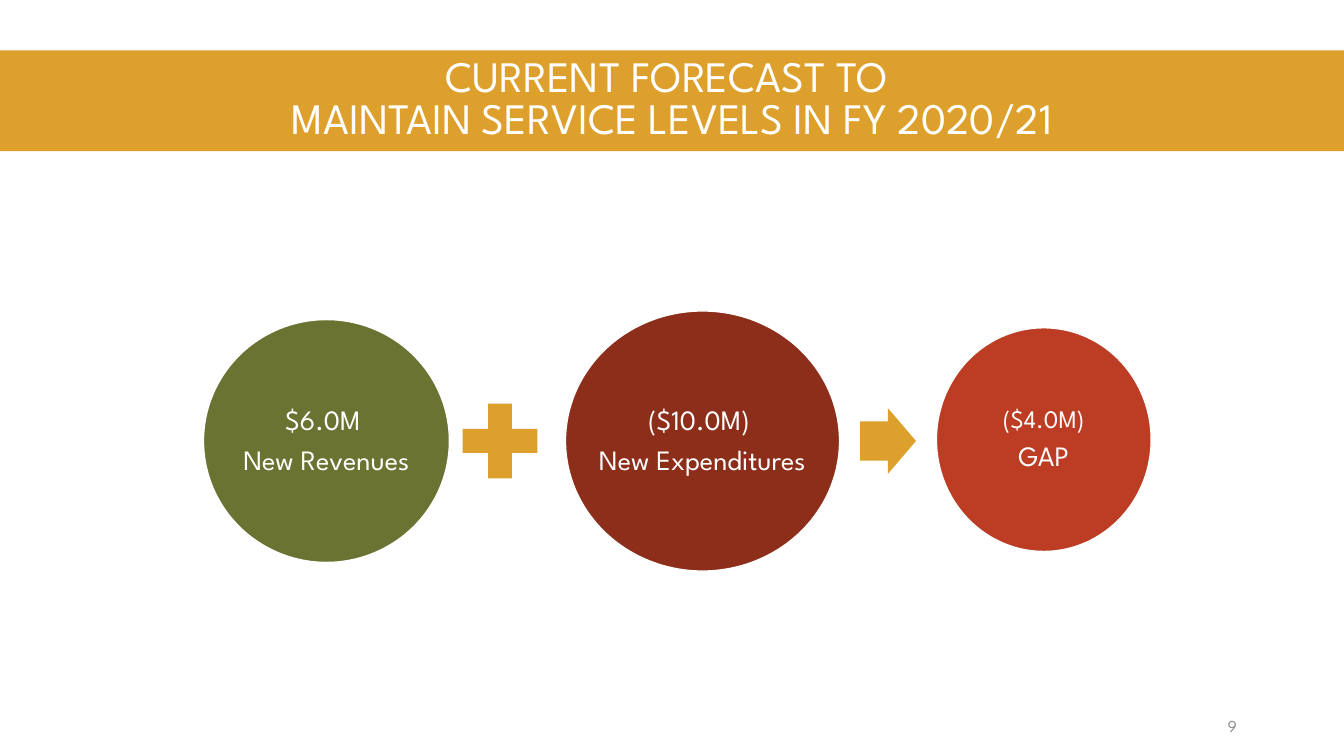
"""Build the slide on the forecast gap for FY 2020/21."""
from dataclasses import dataclass

from pptx import Presentation
from pptx.dml.color import RGBColor
from pptx.enum.shapes import MSO_SHAPE
from pptx.enum.text import MSO_ANCHOR, PP_ALIGN
from pptx.shapes.autoshape import Shape
from pptx.slide import Slide
from pptx.util import Pt

WHITE = RGBColor(0xFF, 0xFF, 0xFF)
GOLD = RGBColor(0xDE, 0xA0, 0x2C)
GREEN = RGBColor(0x6B, 0x73, 0x32)
BROWN = RGBColor(0x8D, 0x2E, 0x1B)
RED = RGBColor(0xBC, 0x3D, 0x24)
GREY = RGBColor(0x8C, 0x8C, 0x8C)
FONT = "League Spartan"
WIDE, HIGH = 960, 540
MID = 315


@dataclass(frozen=True)
class Line:
    text: str
    size: float


@dataclass(frozen=True)
class Disc:
    x: float
    y: float
    width: float
    height: float
    fill: RGBColor
    lines: tuple[Line, ...]


@dataclass(frozen=True)
class Sign:
    kind: MSO_SHAPE
    x: float
    width: float
    height: float
    tweaks: tuple[float, ...]


DISCS = (
    Disc(233.2, MID, 175.7, 173.5, GREEN,
         (Line("$6.0M ", 20), Line("New Revenues", 20))),
    Disc(501.8, MID, 195.8, 185.8, BROWN,
         (Line("($10.0M) ", 20), Line("New Expenditures", 20))),
    Disc(745.6, 314, 153.4, 159.8, RED,
         (Line("($4.0M)", 18), Line("GAP", 20))),
)
SIGNS = (
    Sign(MSO_SHAPE.CROSS, 357.2, 53.4, 53.4, (0.34,)),
    Sign(MSO_SHAPE.RIGHT_ARROW, 634.3, 40, 46.8, (0.6, 0.5)),
)
TITLE = (
    Line("CURRENT FORECAST TO ", 31),
    Line("MAINTAIN SERVICE LEVELS IN FY 2020/21", 31),
)


def apply(target: object, form: dict[str, object]) -> None:
    """Set each format value on the target."""
    for name, value in form.items():
        setattr(target, name, value)


def write(shape: Shape, lines: tuple[Line, ...], ink: RGBColor,
          frame: dict[str, object], align: PP_ALIGN,
          pitch: float, gap: float) -> None:
    """Fill the shape with one paragraph per line."""
    box = shape.text_frame
    apply(box, {"vertical_anchor": MSO_ANCHOR.MIDDLE} | frame)
    for spot, line in enumerate(lines):
        para = box.add_paragraph() if spot else box.paragraphs[0]
        apply(para, {"alignment": align, "line_spacing": pitch,
                     "space_after": Pt(gap * line.size)})
        run = para.add_run()
        run.text = line.text
        apply(run.font, {"name": FONT, "size": Pt(line.size)})
        run.font.color.rgb = ink


def draw(slide: Slide, kind: MSO_SHAPE, x: float, y: float,
         width: float, height: float, fill: RGBColor) -> Shape:
    """Add a flat shape centred on x and y."""
    shape = slide.shapes.add_shape(
        kind, Pt(x - width / 2), Pt(y - height / 2), Pt(width), Pt(height))
    shape.shadow.inherit = False
    shape.fill.solid()
    shape.fill.fore_color.rgb = fill
    shape.line.fill.background()
    return shape


def add_disc(slide: Slide, disc: Disc) -> None:
    """Add a labelled disc with a thin white rim."""
    shape = draw(slide, MSO_SHAPE.OVAL, disc.x, disc.y,
                 disc.width, disc.height, disc.fill)
    shape.line.color.rgb = WHITE
    shape.line.width = Pt(1)
    sides = ("left", "top", "right", "bottom")
    frame = {f"margin_{side}": Pt(0) for side in sides}
    write(shape, disc.lines, WHITE, frame | {"word_wrap": False},
          PP_ALIGN.CENTER, 0.9, 0.35)


def add_sign(slide: Slide, sign: Sign) -> None:
    """Add a gold sign between two discs."""
    shape = draw(slide, sign.kind, sign.x, MID, sign.width, sign.height, GOLD)
    for spot, tweak in enumerate(sign.tweaks):
        shape.adjustments[spot] = tweak


def main() -> None:
    """Build and save the deck."""
    deck = Presentation()
    apply(deck, {"slide_width": Pt(WIDE), "slide_height": Pt(HIGH)})
    slide = deck.slides.add_slide(deck.slide_layouts[6])
    for disc in DISCS:
        add_disc(slide, disc)
    for sign in SIGNS:
        add_sign(slide, sign)
    band = draw(slide, MSO_SHAPE.RECTANGLE, WIDE / 2, 72, WIDE, 72, GOLD)
    write(band, TITLE, WHITE,
          {"margin_left": Pt(36), "margin_right": Pt(36), "word_wrap": True},
          PP_ALIGN.CENTER, 0.8, 0)
    page = slide.shapes.add_textbox(Pt(674.6), Pt(504), Pt(216), Pt(28.8))
    write(page, (Line("9", 12),), GREY, {"word_wrap": True},
          PP_ALIGN.RIGHT, 1.0, 0)
    deck.save("out.pptx")


if __name__ == "__main__":
    main()
